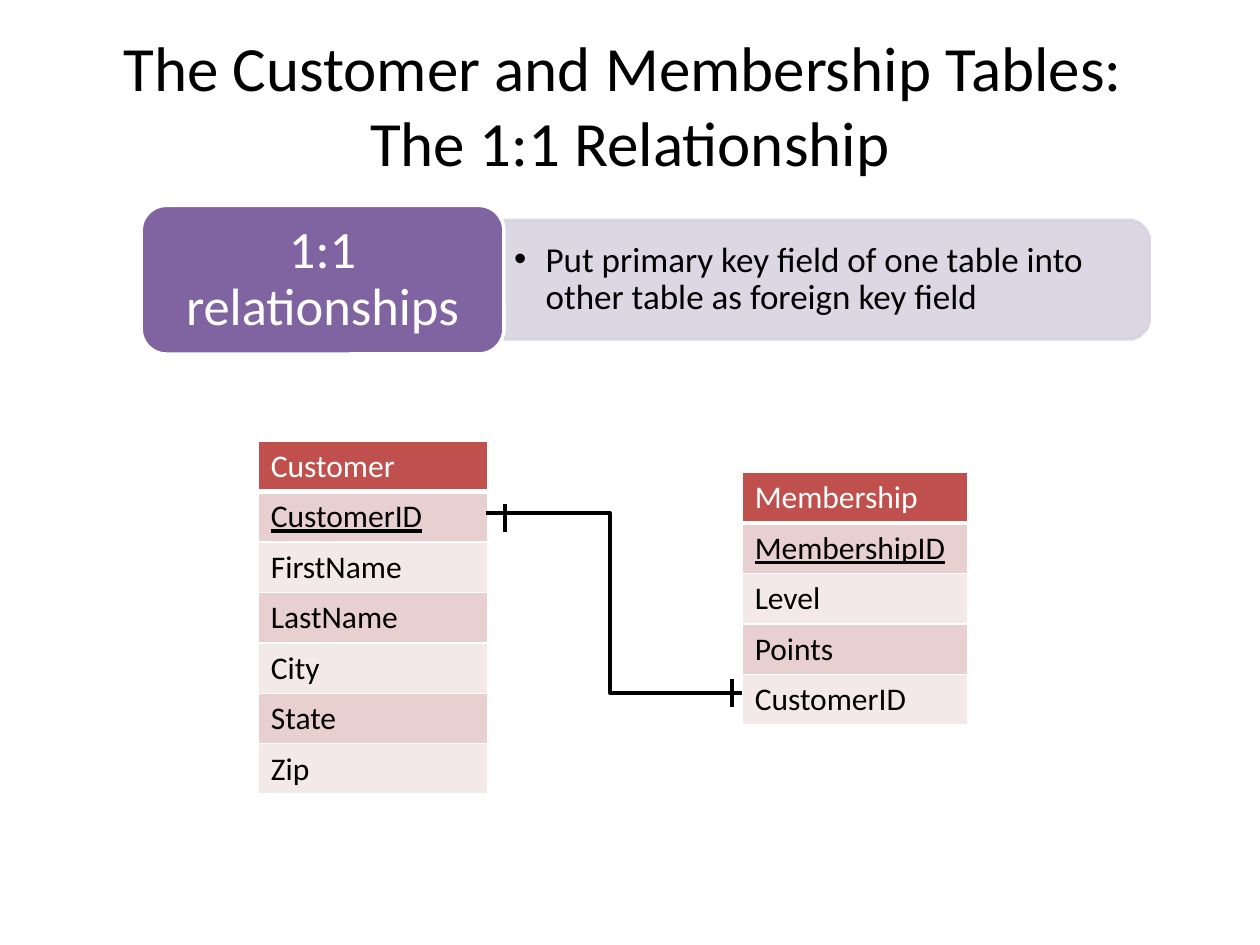
import math

from lxml import etree
from pptx import Presentation
from pptx.dml.color import RGBColor
from pptx.enum import shapes, text
from pptx.oxml import ns
from pptx.util import Pt

SCALE = 9144
FONT = "Calibri"
COLORS = {
    "ink": "000000", "paper": "FFFFFF", "purple": "8064A2", "lilac": "D8D3E0",
    "header": "C0504D", "dark_band": "E8D0D0", "light_band": "F4E9E9",
}


def px(*lengths):
    """Turn px lengths into EMU."""
    return [length * SCALE for length in lengths]


def rgb(name):
    """Look up a named colour."""
    return RGBColor.from_string(COLORS[name])


def style_paragraph(paragraph, size, color, align=text.PP_ALIGN.LEFT):
    """Set alignment and font of every run in a paragraph."""
    paragraph.alignment = align
    for run in paragraph.runs:
        run.font.name = FONT
        run.font.size = Pt(size)
        run.font.bold = False
        run.font.color.rgb = rgb(color)


def fill_frame(frame, words, size, color, align, insets):
    """Write one vertically centred, wrapped paragraph."""
    frame.word_wrap = True
    frame.vertical_anchor = text.MSO_ANCHOR.MIDDLE
    (frame.margin_left, frame.margin_top,
     frame.margin_right, frame.margin_bottom) = px(*insets)
    frame.text = words
    style_paragraph(frame.paragraphs[0], size, color, align)
    return frame.paragraphs[0]


def paint(shape, fill, line, alpha=100):
    """Set fill, outline and opacity of a shape without shadow."""
    shape.shadow.inherit = False
    if fill:
        shape.fill.solid()
        shape.fill.fore_color.rgb = rgb(fill)
    else:
        shape.fill.background()
    shape.line.color.rgb = rgb(line)
    shape.line.width = Pt(2)
    if alpha < 100:
        for color in shape._element.spPr.iter(ns.qn("a:srgbClr")):
            etree.SubElement(color, ns.qn("a:alpha"), val=str(alpha * 1000))


def outline(slide, points, close):
    """Build a freeform through px points."""
    builder = slide.shapes.build_freeform(*points[0], scale=SCALE)
    builder.add_line_segments(points[1:], close=close)
    return builder.convert_to_shape()


def add_title(slide, left, top, width, height):
    """Place the two-line slide title."""
    title = slide.shapes.add_textbox(*px(left, top, width, height))
    fill_frame(title.text_frame,
               "The Customer and Membership Tables: \vThe 1:1 Relationship",
               36, "ink", text.PP_ALIGN.CENTER, (10, 5, 10, 5))


def add_rule(slide, left, top, width, height):
    """Place the purple rule name and its explanation panel."""
    name_width, inset, radius = 288, 12, 16
    panel_left, right = left + name_width, left + width
    panel_top, bottom = top + inset, top + height - inset
    corners = []
    for start, center_y in ((-90, panel_top + radius), (0, bottom - radius)):
        for step in range(0, 91, 10):
            angle = math.radians(start + step)
            corners.append((right - radius + radius * math.cos(angle),
                            center_y + radius * math.sin(angle)))
    panel = outline(slide, [(panel_left, panel_top), *corners, (panel_left, bottom)], True)
    paint(panel, "lilac", "lilac", 90)
    explanation = fill_frame(
        panel.text_frame,
        "Put primary key field of one table into other table as foreign key field",
        20, "ink", text.PP_ALIGN.LEFT, (8, 9, 13, 9))
    explanation.line_spacing = 0.9
    properties = explanation._p.get_or_add_pPr()
    indent = px(25)[0]
    properties.set("marL", str(indent))
    properties.set("indent", str(-indent))
    etree.SubElement(properties, ns.qn("a:buFont"), typeface="Arial")
    etree.SubElement(properties, ns.qn("a:buChar"), char="•")

    name = slide.shapes.add_shape(shapes.MSO_SHAPE.ROUNDED_RECTANGLE,
                                  *px(left, top, name_width, height))
    name.adjustments[0] = 0.17
    paint(name, "purple", "paper")
    label = fill_frame(name.text_frame, "1:1 relationships", 30, "paper",
                       text.PP_ALIGN.CENTER, (18, 12, 18, 12))
    label.line_spacing = 0.9


def border_cell(cell, bottom_width):
    """Give a cell white borders."""
    properties = cell._tc.get_or_add_tcPr()
    for index, side in enumerate("LRTB"):
        width = Pt(bottom_width if side == "B" else 1)
        line = etree.Element(ns.qn(f"a:ln{side}"), w=str(width))
        fill = etree.SubElement(line, ns.qn("a:solidFill"))
        etree.SubElement(fill, ns.qn("a:srgbClr"), val=COLORS["paper"])
        properties.insert(index, line)


def add_entity(slide, left, top, width, fields):
    """Place an entity table: name, underlined primary key, other fields."""
    row_height = 40
    frame = slide.shapes.add_table(len(fields), 1,
                                   *px(left, top, width, row_height * len(fields)))
    entity = frame.table
    entity.first_row = entity.horz_banding = False
    for row, field in enumerate(fields):
        cell = entity.cell(row, 0)
        cell.text = field
        paragraph = cell.text_frame.paragraphs[0]
        style_paragraph(paragraph, 18, "ink" if row else "paper")
        paragraph.runs[0].font.underline = row == 1
        band = "dark_band" if row % 2 else "light_band"
        cell.fill.solid()
        cell.fill.fore_color.rgb = rgb(band if row else "header")
        border_cell(cell, 1 if row else 3)


def add_relationship(slide, left, top, width, height):
    """Join the key fields by an elbow with a one-mark near each end."""
    bend, right, bottom = left + 98, left + width, top + height
    elbow = outline(slide, [(left, top), (bend, top), (bend, bottom), (right, bottom)], False)
    paint(elbow, None, "ink")
    for x, y in ((left + 15, top - 7), (right - 8, bottom - 11)):
        mark = slide.shapes.add_connector(shapes.MSO_CONNECTOR.STRAIGHT,
                                          *px(x, y, x, y + 22))
        mark.line.color.rgb = rgb("ink")
        mark.line.width = Pt(2)
        etree.SubElement(mark._element.spPr, ns.qn("a:effectLst"))


def main():
    """Build and save the slide."""
    deck = Presentation()
    deck.slide_width, deck.slide_height = px(1000, 750)
    slide = deck.slides.add_slide(deck.slide_layouts[6])
    add_title(slide, 50, 20, 900, 125)
    add_rule(slide, 112, 163, 800, 118)
    add_entity(slide, 205, 350, 182,
               ["Customer", "CustomerID", "FirstName", "LastName", "City", "State", "Zip"])
    add_entity(slide, 589, 375, 179,
               ["Membership", "MembershipID", "Level", "Points", "CustomerID"])
    add_relationship(slide, 386, 407, 203, 143)
    deck.save("out.pptx")


if __name__ == "__main__":
    main()
